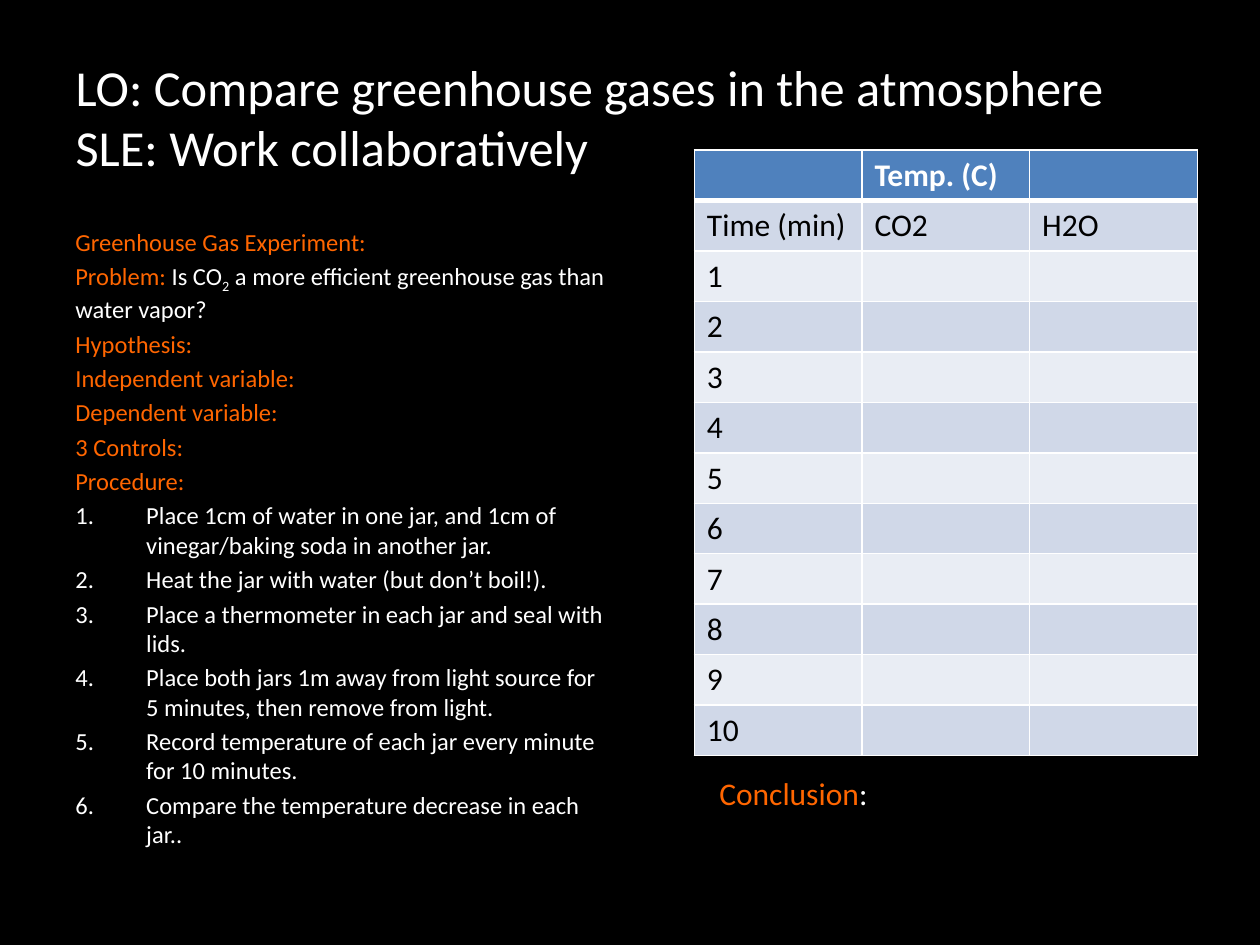
from lxml import etree
from pptx import Presentation
from pptx.dml.color import RGBColor
from pptx.enum import text
from pptx.oxml.ns import qn
from pptx.util import Pt

COLORS = {"background": "000000", "label": "FF6600", "light": "FFFFFF", "dark": "000000",
          "header": "4F81BD", "band_a": "D0D8E8", "band_b": "E9EDF4"}
FONT = "Calibri"

TITLE = "LO: Compare greenhouse gases in the atmosphere\vSLE: Work collaboratively"
# Each line is a list of (text, color name, baseline shift in percent).
OUTLINE = [
    [("Greenhouse Gas Experiment:", "label", 0)],
    [("Problem: ", "label", 0), ("Is CO", "light", 0), ("2", "light", -25),
     (" a more efficient greenhouse gas than water vapor?", "light", 0)],
    [("Hypothesis:", "label", 0)],
    [("Independent variable:", "label", 0)],
    [("Dependent variable:", "label", 0)],
    [("3 Controls:", "label", 0)],
    [("Procedure:", "label", 0)],
]
STEPS = [
    "Place 1cm of water in one jar, and 1cm of vinegar/baking soda in another jar.",
    "Heat the jar with water (but don’t boil!).",
    "Place a thermometer in each jar and seal with lids.",
    "Place both jars 1m away from light source for 5 minutes, then remove from light.",
    "Record temperature of each jar every minute for 10 minutes.",
    "Compare the temperature decrease in each jar..",
]
CONCLUSION = [("Conclusion", "label", 0), (":", "light", 0)]
READINGS = [("", "Temp. (C)", ""), ("Time (min)", "CO2", "H2O")]
READINGS += [(str(minute), "", "") for minute in range(1, 11)]

TEXT_SIZE, TABLE_SIZE = 14, 18
STEP_INDENT = 40.5
COLUMN_WIDTH, ROW_HEIGHT = 95.8, 28.8


def rgb(name):
    return RGBColor.from_string(COLORS[name])


def style(font, size, color, bold=False):
    font.name, font.size, font.bold = FONT, Pt(size), bold
    font.color.rgb = rgb(color)


def add_spans(para, spans, size):
    for words, color, shift in spans:
        span = para.add_run()
        span.text = words
        style(span.font, size, color)
        if shift:
            span.font._element.set("baseline", str(shift * 1000))


def number(para):
    """Give a paragraph an automatic number and a hanging indent."""
    properties = para._p.get_or_add_pPr()
    properties.set("marL", str(Pt(STEP_INDENT)))
    properties.set("indent", str(-Pt(STEP_INDENT)))
    etree.SubElement(properties, qn("a:buFont"), typeface="+mj-lt")
    etree.SubElement(properties, qn("a:buAutoNum"), type="arabicPeriod")


def set_borders(cell, widths):
    properties = cell._tc.get_or_add_tcPr()
    for side, width in widths.items():
        line = etree.SubElement(properties, qn("a:ln" + side), w=str(Pt(width)))
        fill = etree.SubElement(line, qn("a:solidFill"))
        etree.SubElement(fill, qn("a:srgbClr"), val=COLORS["light"])


def add_title(page):
    title = page.shapes.title
    title.left, title.top, title.width, title.height = Pt(36), Pt(21.6), Pt(648), Pt(90)
    frame = title.text_frame
    frame.text = TITLE
    frame.word_wrap = True
    frame.auto_size = text.MSO_AUTO_SIZE.NONE
    frame.vertical_anchor = text.MSO_ANCHOR.MIDDLE
    para = frame.paragraphs[0]
    para.alignment = text.PP_ALIGN.LEFT
    for span in para.runs:
        style(span.font, 28.8, "light")


def add_experiment(page):
    box = page.shapes.add_textbox(Pt(36), Pt(126), Pt(318), Pt(356.4))
    frame = box.text_frame
    frame.word_wrap = True
    lines = OUTLINE + [[(step, "light", 0)] for step in STEPS]
    for index, spans in enumerate(lines):
        para = frame.add_paragraph() if index else frame.paragraphs[0]
        if index:
            para.space_before = Pt(0.2 * TEXT_SIZE)
        if index >= len(OUTLINE):
            number(para)
        add_spans(para, spans, TEXT_SIZE)


def add_readings(page):
    rows, columns = len(READINGS), len(READINGS[0])
    table = page.shapes.add_table(rows, columns, Pt(396.8), Pt(85.8),
                                  Pt(columns * COLUMN_WIDTH), Pt(rows * ROW_HEIGHT)).table
    for column in table.columns:
        column.width = Pt(COLUMN_WIDTH)
    for r, values in enumerate(READINGS):
        table.rows[r].height = Pt(ROW_HEIGHT)
        band = "header" if r == 0 else ("band_a" if r % 2 else "band_b")
        for c, value in enumerate(values):
            cell = table.cell(r, c)
            set_borders(cell, {"L": 1, "R": 1, "T": 3 if r == 1 else 1, "B": 1 if r else 3})
            cell.fill.solid()
            cell.fill.fore_color.rgb = rgb(band)
            cell.text = value
            for span in cell.text_frame.paragraphs[0].runs:
                style(span.font, TABLE_SIZE, "dark" if r else "light", bold=r == 0)


def add_conclusion(page):
    frame = page.shapes.add_textbox(Pt(404), Pt(438.5), Pt(100), Pt(29)).text_frame
    frame.word_wrap = False
    frame.auto_size = text.MSO_AUTO_SIZE.SHAPE_TO_FIT_TEXT
    add_spans(frame.paragraphs[0], CONCLUSION, TABLE_SIZE)


def main():
    deck = Presentation()
    deck.slide_width, deck.slide_height = Pt(720), Pt(540)
    page = deck.slides.add_slide(deck.slide_layouts.get_by_name("Title Only"))
    page.background.fill.solid()
    page.background.fill.fore_color.rgb = rgb("background")
    add_title(page)
    add_experiment(page)
    add_readings(page)
    add_conclusion(page)
    deck.save("out.pptx")


if __name__ == "__main__":
    main()
